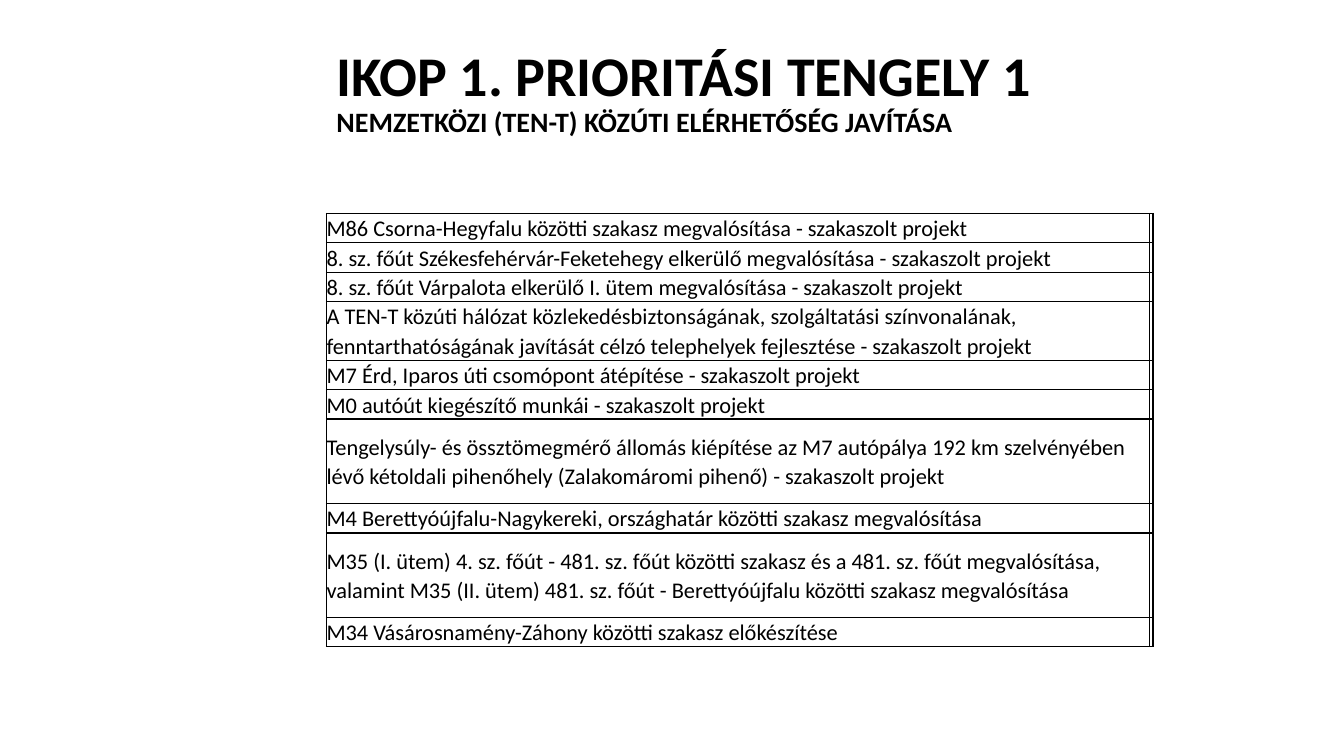
from lxml.etree import SubElement
from pptx import Presentation
from pptx.dml.color import RGBColor
from pptx.enum.text import MSO_ANCHOR
from pptx.oxml import parse_xml
from pptx.oxml.ns import nsdecls, qn
from pptx.util import Cm, Pt

COLORS = {"ink": "000000", "paper": "FFFFFF"}
LEFT, WIDTH = 8.23, 20.83
SINGLE, DOUBLE, TALL = 0.74, 1.48, 2.13

PROJECTS = [
    ("M86 Csorna-Hegyfalu közötti szakasz megvalósítása - szakaszolt projekt", SINGLE),
    ("8. sz. főút Székesfehérvár-Feketehegy elkerülő megvalósítása - szakaszolt projekt", SINGLE),
    ("8. sz. főút Várpalota elkerülő I. ütem megvalósítása - szakaszolt projekt", SINGLE),
    ("A TEN-T közúti hálózat közlekedésbiztonságának, szolgáltatási színvonalának, "
     "fenntarthatóságának javítását célzó telephelyek fejlesztése - szakaszolt projekt", DOUBLE),
    ("M7 Érd, Iparos úti csomópont átépítése - szakaszolt projekt", SINGLE),
    ("M0 autóút kiegészítő munkái - szakaszolt projekt", SINGLE),
    ("Tengelysúly- és össztömegmérő állomás kiépítése az M7 autópálya 192 km szelvényében "
     "lévő kétoldali pihenőhely (Zalakomáromi pihenő) - szakaszolt projekt", TALL),
    ("M4 Berettyóújfalu-Nagykereki, országhatár közötti szakasz megvalósítása", SINGLE),
    ("M35 (I. ütem) 4. sz. főút - 481. sz. főút közötti szakasz és a 481. sz. főút megvalósítása, "
     "valamint M35 (II. ütem) 481. sz. főút - Berettyóújfalu közötti szakasz megvalósítása", TALL),
    ("M34 Vásárosnamény-Záhony közötti szakasz előkészítése", SINGLE),
]


class SlideBuilder:
    def __init__(self, page, font="Calibri"):
        self.page = page
        self.font = font

    def run(self, para, text, size, bold=False):
        span = para.add_run()
        span.text = text
        span.font.name = self.font
        span.font.size = Pt(size)
        span.font.bold = bold
        span.font.color.rgb = RGBColor.from_string(COLORS["ink"])

    def title(self, lines, left, top, width, height):
        box = self.page.shapes.add_textbox(Cm(left), Cm(top), Cm(width), Cm(height))
        frame = box.text_frame
        frame.word_wrap = True
        frame.vertical_anchor = MSO_ANCHOR.MIDDLE
        para = frame.paragraphs[0]
        para.line_spacing = 0.9
        for index, (text, size) in enumerate(lines):
            if index:
                para.add_line_break()
            self.run(para, text, size, bold=True)

    def style_cell(self, cell):
        cell.margin_left = cell.margin_right = cell.margin_top = cell.margin_bottom = 0
        cell.vertical_anchor = MSO_ANCHOR.MIDDLE
        cell.fill.solid()
        cell.fill.fore_color.rgb = RGBColor.from_string(COLORS["paper"])
        # Borders come before the fill in the cell properties
        properties = cell._tc.get_or_add_tcPr()
        for index, side in enumerate(("lnL", "lnR", "lnT", "lnB")):
            properties.insert(index, parse_xml(
                f'<a:{side} {nsdecls("a")} w="{Pt(1)}"><a:solidFill>'
                f'<a:srgbClr val="{COLORS["ink"]}"/></a:solidFill></a:{side}>'))

    def table(self, rows, left, top, widths, size):
        heights = [height for _, height in rows]
        table = self.page.shapes.add_table(
            len(rows), len(widths), Cm(left), Cm(top), Cm(sum(widths)), Cm(sum(heights))).table
        for column, width in zip(table.columns, widths):
            column.width = Cm(width)
        for row, (text, height) in zip(table.rows, rows):
            row.height = Cm(height)
            for cell in row.cells:
                self.style_cell(cell)
            para = row.cells[0].text_frame.paragraphs[0]
            para.line_spacing = 1.07
            self.run(para, text, size)
            # Keep the empty narrow cell from stretching the row
            empty = row.cells[1].text_frame.paragraphs[0]
            SubElement(empty._p, qn("a:endParaRPr"), sz="800")


def main():
    deck = Presentation()
    deck.slide_width, deck.slide_height = Cm(33.87), Cm(19.05)
    builder = SlideBuilder(deck.slides.add_slide(deck.slide_layouts[6]))

    # Heading
    builder.title([("IKOP 1. PRIORITÁSI TENGELY 1", 40),
                   ("NEMZETKÖZI (TEN-T) KÖZÚTI ELÉRHETŐSÉG JAVÍTÁSA", 20)],
                  LEFT, 0.76, WIDTH, 3.18)

    # Project list with its narrow closing column
    builder.table(PROJECTS, LEFT, 5.38, [WIDTH - 0.1, 0.1], 16)

    deck.save("out.pptx")


if __name__ == "__main__":
    main()
